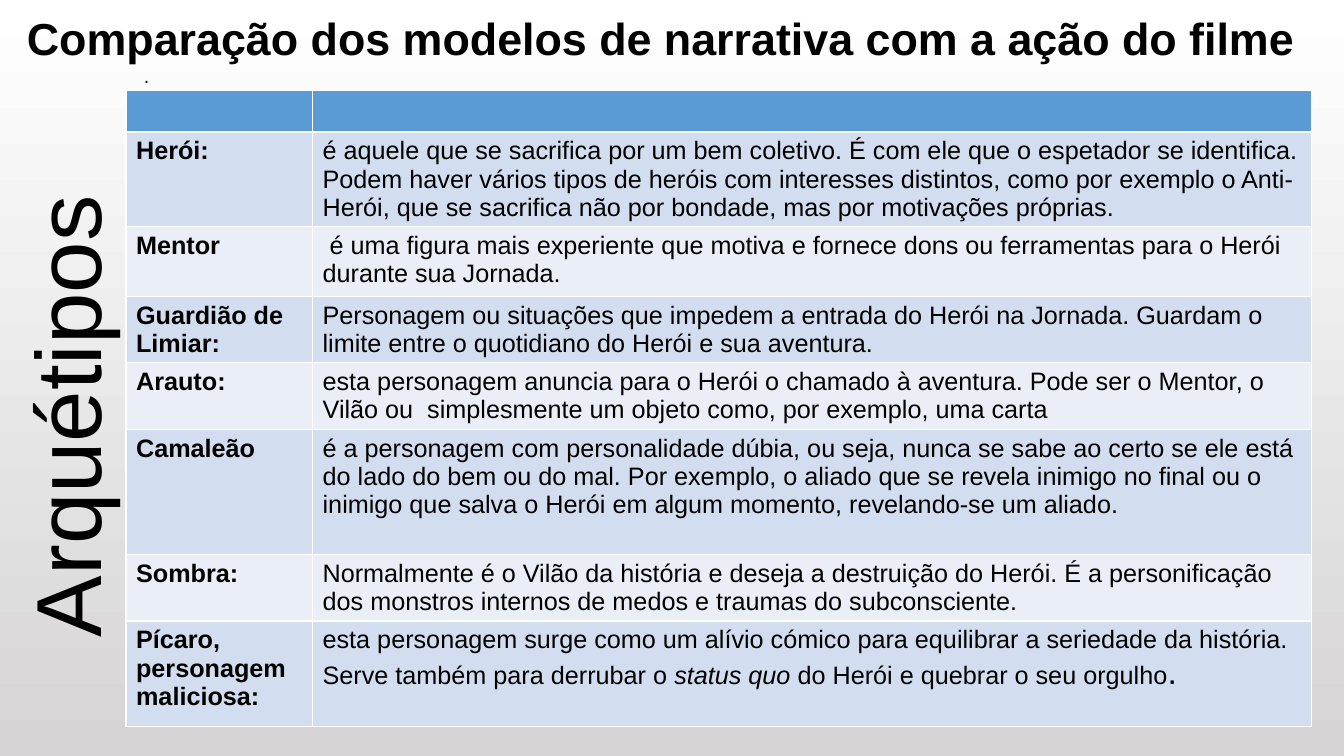
from pptx import Presentation
from pptx import util as u
from pptx.dml import color
from pptx.enum import text

HUES = {"ink": "000000", "head": "5B9BD5", "dark": "D2DEEF", "light": "EAEFF7",
        "top": "FFFFFF", "base": "D6D4D4"}
ROWS = [
    ("Herói:", 0.94, ["é aquele que se sacrifica por um bem coletivo. É com ele que o espetador se identifica. Podem haver vários tipos de heróis com interesses distintos, como por exemplo o Anti-Herói, que se sacrifica não por bondade, mas por motivações próprias."]),
    ("Mentor", 0.69, [" é uma figura mais experiente que motiva e fornece dons ou ferramentas para o Herói durante sua Jornada."]),
    ("Guardião de Limiar:", 0.66, ["Personagem ou situações que impedem a entrada do Herói na Jornada. Guardam o limite entre o quotidiano do Herói e sua aventura."]),
    ("Arauto:", 0.66, ["esta personagem anuncia para o Herói o chamado à aventura. Pode ser o Mentor, o Vilão ou  simplesmente um objeto como, por exemplo, uma carta"]),
    ("Camaleão", 1.24, ["é a personagem com personalidade dúbia, ou seja, nunca se sabe ao certo se ele está do lado do bem ou do mal. Por exemplo, o aliado que se revela inimigo no final ou o inimigo que salva o Herói em algum momento, revelando-se um aliado."]),
    ("Sombra:", 0.66, ["Normalmente é o Vilão da história e deseja a destruição do Herói. É a personificação dos monstros internos de medos e traumas do subconsciente."]),
    ("Pícaro, personagem maliciosa:", 1.05, ["esta personagem surge como um alívio cómico para equilibrar a seriedade da história. Serve também para derrubar o ", "status quo ", "do Herói e quebrar o seu orgulho", "."]),
]


def hue(name):
    """Return the named colour."""
    return color.RGBColor.from_string(HUES[name])


def style(run, size, bold=False):
    """Format one run in black Arial."""
    font = run.font
    font.name, font.size, font.bold = "Arial", u.Pt(size), bold
    font.color.rgb = hue("ink")


def place(shape, box):
    """Move a shape to a box given in inches."""
    shape.left, shape.top, shape.width, shape.height = map(u.Inches, box)


def label(shape, words, box, size, bold=False, align=text.PP_ALIGN.CENTER):
    """Fill a text shape with one formatted line."""
    place(shape, box)
    frame = shape.text_frame
    frame.text = words
    frame.word_wrap = True
    frame.auto_size = text.MSO_AUTO_SIZE.NONE
    frame.vertical_anchor = text.MSO_ANCHOR.TOP
    line = frame.paragraphs[0]
    line.alignment = align
    line.space_before = u.Pt(0)
    style(line.runs[0], size, bold)
    return line


def backdrop(slide):
    """Paint the vertical grey gradient."""
    fill = slide.background.fill
    fill.gradient()
    fill.gradient_angle = 270
    for stop, name in zip(fill.gradient_stops, ("top", "base")):
        stop.color.rgb = hue(name)


def heading(slide, box):
    """Place the title and the small dot under it."""
    left, top, width, height = box
    label(slide.shapes.title, "Comparação dos modelos de narrativa com a ação do filme",
          box, 32, True)
    dot = label(slide.placeholders[1], ".", (left + 0.25, top + 0.55, 2.33, 6.56), 14)
    dot.line_spacing = 0.9


def sidebar(slide, box):
    """Place the upright label inside a tall box."""
    left, top, width, height = box
    side = slide.shapes.add_textbox(0, 0, 0, 0)
    flat = (left + (width - height) / 2, top + (height - width) / 2, height, width)
    label(side, "Arquétipos", flat, 66, align=text.PP_ALIGN.LEFT)
    side.rotation = 270


def grid(slide, box):
    """Build the table of archetypes."""
    table = slide.shapes.add_table(len(ROWS) + 1, 2, *map(u.Inches, box)).table
    name_w = 1.85
    table.columns[0].width = u.Inches(name_w)
    table.columns[1].width = u.Inches(box[2] - name_w)
    for i, row in enumerate(table.rows):
        row.height = u.Inches(ROWS[i - 1][1] if i else 0.41)
        for cell in row.cells:
            cell.fill.solid()
            cell.fill.fore_color.rgb = hue(("dark" if i % 2 else "light") if i else "head")
    for i, (name, _, parts) in enumerate(ROWS, 1):
        for j, words in enumerate(([name], parts)):
            line = table.cell(i, j).text_frame.paragraphs[0]
            for part in words:
                run = line.add_run()
                run.text = part
                style(run, 24 if part == "." else 18, j == 0)
                run.font.italic = part == "status quo "


def main():
    """Build and save the slide."""
    deck = Presentation()
    deck.slide_width, deck.slide_height = u.Inches(13.33), u.Inches(7.5)
    slide = deck.slides.add_slide(deck.slide_layouts[0])
    backdrop(slide)
    heading(slide, (0.04, 0.06, 13.04, 0.64))
    grid(slide, (1.25, 0.9, 11.76, 6.31))
    sidebar(slide, (0.04, 1.3, 1.21, 5.12))
    deck.save("out.pptx")


if __name__ == "__main__":
    main()
